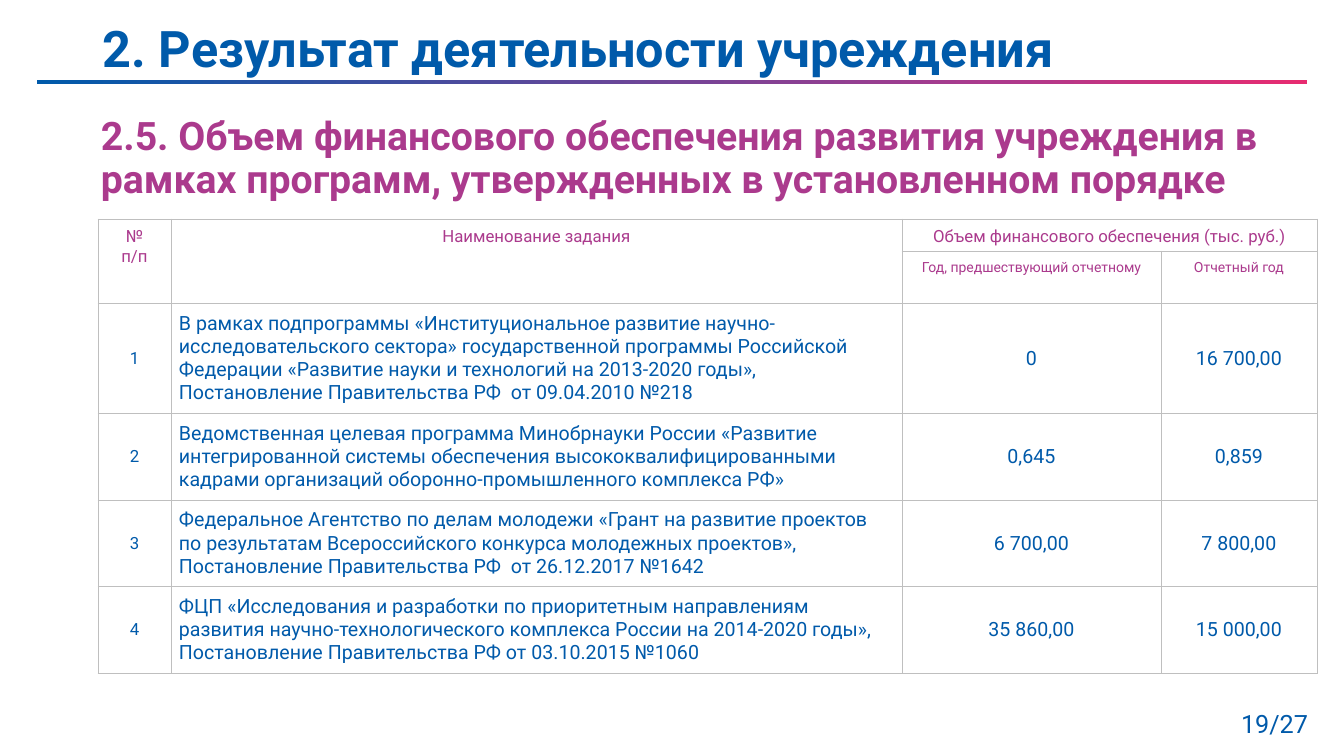
import copy

import pptx
import pptx.dml.color
import pptx.enum.shapes
import pptx.enum.text
import pptx.oxml
import pptx.oxml.ns
import pptx.util

BLUE, PURPLE, PINK, GRAY = "005AAA", "AB3A8D", "E72B70", "BFBFBF"
LEFT, CENTER, RIGHT = (
    pptx.enum.text.PP_ALIGN.LEFT,
    pptx.enum.text.PP_ALIGN.CENTER,
    pptx.enum.text.PP_ALIGN.RIGHT,
)
TOP, MIDDLE = pptx.enum.text.MSO_ANCHOR.TOP, pptx.enum.text.MSO_ANCHOR.MIDDLE


def px(length):
    return pptx.util.Emu(round(length * 914400 / 100.8))


def rgb(color):
    return pptx.dml.color.RGBColor.from_string(color)


class ReportSlide:
    font = "Roboto"

    def __init__(self, presentation):
        self.slide = presentation.slides.add_slide(presentation.slide_layouts[6])

    def add_runs(self, frame, paragraphs, size, color, bold=False, align=LEFT, spacing=1.0):
        for index, content in enumerate(paragraphs):
            paragraph = frame.add_paragraph() if index else frame.paragraphs[0]
            paragraph.alignment = align
            paragraph.line_spacing = spacing
            for number, line in enumerate(content.split("\n")):
                if number:
                    paragraph.add_line_break()
                run = paragraph.add_run()
                run.text = line
                run.font.name = self.font
                run.font.size = pptx.util.Pt(size)
                run.font.bold = bold
                run.font.color.rgb = rgb(color)

    def text(self, box, content, size, color, anchor=TOP, **style):
        frame = self.slide.shapes.add_textbox(*map(px, box)).text_frame
        frame.word_wrap = True
        frame.vertical_anchor = anchor
        self.add_runs(frame, [content], size, color, **style)

    def gradient_bar(self, box, stops):
        bar = self.slide.shapes.add_shape(
            pptx.enum.shapes.MSO_SHAPE.RECTANGLE, *map(px, box))
        bar.shadow.inherit = False
        bar.line.fill.background()
        bar.fill.gradient()
        bar.fill.gradient_angle = 0
        stop_list = next(bar._element.spPr.iter(pptx.oxml.ns.qn("a:gsLst")))
        while len(stop_list) < len(stops):
            stop_list.append(copy.deepcopy(stop_list[0]))
        for stop, (position, color) in zip(bar.fill.gradient_stops, stops):
            stop.position = position
            stop.color.rgb = rgb(color)

    def table(self, left, top, widths, heights):
        table = self.slide.shapes.add_table(
            len(heights), len(widths), px(left), px(top),
            px(sum(widths)), px(sum(heights))).table
        table.first_row = table.horz_banding = False
        for column, width in zip(table.columns, widths):
            column.width = px(width)
        for row, height in zip(table.rows, heights):
            row.height = px(height)
        for cell in table.iter_cells():
            self.border(cell)
            cell.fill.background()
        return table

    def border(self, cell):
        properties = cell._tc.get_or_add_tcPr()
        for side in ("lnL", "lnR", "lnT", "lnB"):
            properties.append(pptx.oxml.parse_xml(
                f'<a:{side} {pptx.oxml.ns.nsdecls("a")} w="6350"><a:solidFill>'
                f'<a:srgbClr val="{GRAY}"/></a:solidFill></a:{side}>'))

    def cell(self, cell, paragraphs, size, color, insets, anchor, align=CENTER):
        (cell.margin_left, cell.margin_top,
         cell.margin_right, cell.margin_bottom) = map(px, insets)
        cell.vertical_anchor = anchor
        self.add_runs(cell.text_frame, paragraphs, size, color, align=align)


HEADINGS = [
    (0, 0, 1, 0, ["№", "п/п"], 12),
    (0, 1, 1, 1, ["Наименование задания"], 12),
    (0, 2, 0, 3, ["Объем финансового обеспечения (тыс. руб.)"], 12),
    (1, 2, 1, 2, ["Год, предшествующий отчетному"], 10),
    (1, 3, 1, 3, ["Отчетный год"], 10),
]

PROGRAMS = [
    ("В рамках подпрограммы «Институциональное развитие научно-исследовательского сектора» "
     "государственной программы Российской Федерации «Развитие науки и технологий на "
     "2013-2020 годы», \nПостановление Правительства РФ  от 09.04.2010 №218",
     "0", "16 700,00"),
    ("Ведомственная целевая программа Минобрнауки России «Развитие интегрированной системы "
     "обеспечения высококвалифицированными кадрами организаций оборонно-промышленного "
     "комплекса РФ»",
     "0,645", "0,859"),
    ("Федеральное Агентство по делам молодежи «Грант на развитие проектов по результатам "
     "Всероссийского конкурса молодежных проектов», Постановление Правительства РФ  от "
     "26.12.2017 №1642",
     "6 700,00", "7 800,00"),
    ("ФЦП «Исследования и разработки по приоритетным направлениям развития "
     "научно-технологического комплекса России на 2014-2020 годы», Постановление "
     "Правительства РФ от 03.10.2015 №1060",
     "35 860,00", "15 000,00"),
]


def main():
    presentation = pptx.Presentation()
    presentation.slide_width, presentation.slide_height = px(1344), px(756)
    report = ReportSlide(presentation)

    report.gradient_bar((37, 80, 1270, 4), [(0, BLUE), (0.75, PURPLE), (1, PINK)])
    report.text((1227, 703, 91, 40), "19/27", 18, BLUE, align=RIGHT)
    report.text((91, 112, 1229, 100),
                "2.5. Объем финансового обеспечения развития учреждения в рамках программ, "
                "утвержденных в установленном порядке",
                28, PURPLE, bold=True, spacing=0.9)
    report.text((93, 10, 1159, 83), "2. Результат деятельности учреждения",
                36, BLUE, anchor=MIDDLE, bold=True, spacing=0.9)

    funding = report.table(98, 219, [73, 731, 259, 156], [32, 51, 109, 85, 86, 85])
    for row, column, last_row, last_column, heading, size in HEADINGS:
        heading_cell = funding.cell(row, column)
        if (row, column) != (last_row, last_column):
            heading_cell.merge(funding.cell(last_row, last_column))
        report.cell(heading_cell, heading, size, PURPLE, (4, 8, 4, 4), TOP)
    for number, (program, previous_year, report_year) in enumerate(PROGRAMS, 1):
        values = [(str(number), 12, CENTER), (program, 14, LEFT),
                  (previous_year, 14, CENTER), (report_year, 14, CENTER)]
        for column, (value, size, align) in enumerate(values):
            report.cell(funding.cell(number + 1, column), [value], size, BLUE,
                        (8, 8, 8, 8), MIDDLE, align)

    presentation.save("out.pptx")


if __name__ == "__main__":
    main()
